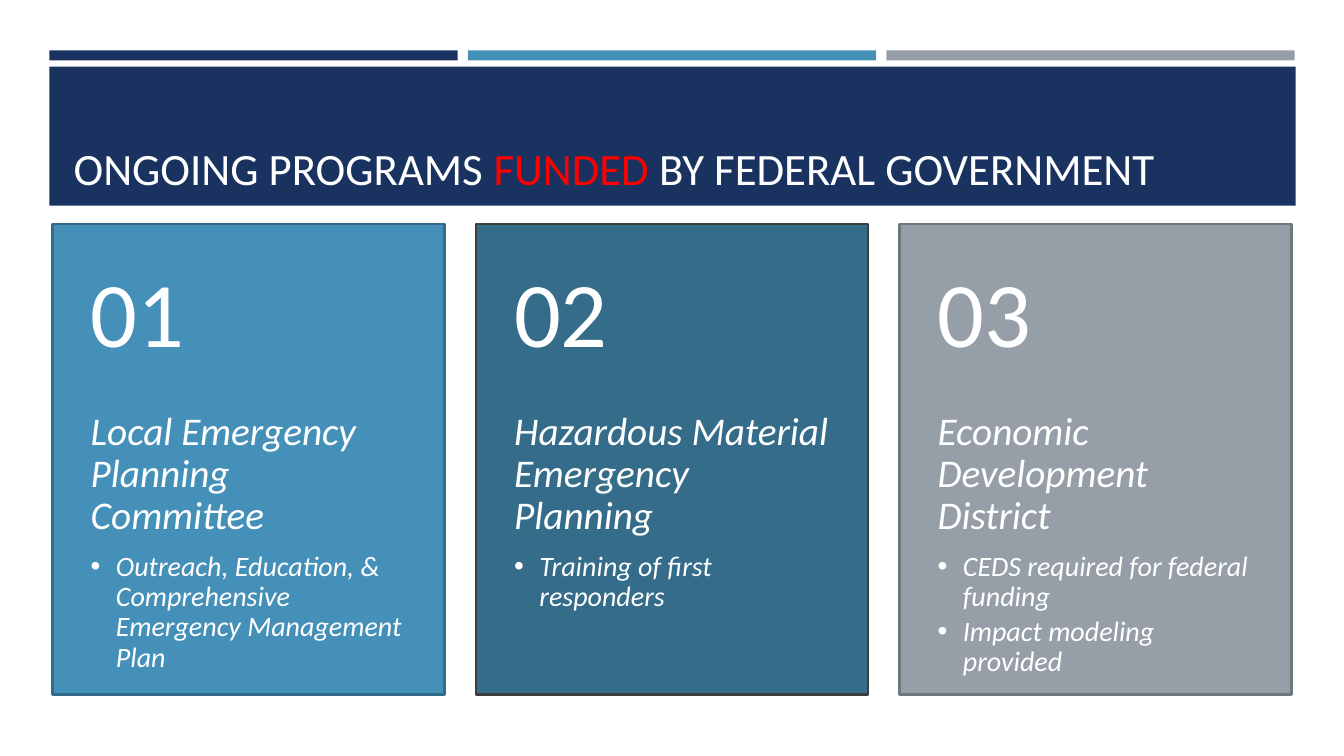
from lxml import etree
from pptx import Presentation
from pptx.dml.color import RGBColor
from pptx.enum.shapes import MSO_SHAPE
from pptx.enum.text import MSO_ANCHOR, MSO_AUTO_SIZE, PP_ALIGN
from pptx.oxml.ns import qn
from pptx.util import Pt

RECT = MSO_SHAPE.RECTANGLE
TOP, MIDDLE, BOTTOM = MSO_ANCHOR.TOP, MSO_ANCHOR.MIDDLE, MSO_ANCHOR.BOTTOM
LEFT = PP_ALIGN.LEFT
NO_FIT = MSO_AUTO_SIZE.NONE

NAVY = RGBColor(0x1A, 0x32, 0x60)
BLUE = RGBColor(0x45, 0x90, 0xB8)
TEAL = RGBColor(0x34, 0x6C, 0x8A)
GRAY = RGBColor(0x96, 0x9F, 0xA7)
BLUE_EDGE = RGBColor(0x33, 0x6B, 0x88)
DARK_EDGE = RGBColor(0x3D, 0x3D, 0x3D)
GRAY_EDGE = RGBColor(0x6F, 0x76, 0x7C)
WHITE = RGBColor(0xFF, 0xFF, 0xFF)
RED = RGBColor(0xFF, 0x00, 0x00)

FONT = "Calibri"
SCALE = 9144
BAR_STEP = 415
CARD_STEP = 420

TITLE = [("ONGOING PROGRAMS ", WHITE), ("FUNDED", RED),
         (" BY FEDERAL GOVERNMENT", WHITE)]
CARDS = [
    (BLUE, BLUE_EDGE, "Local Emergency Planning Committee",
     ["Outreach, Education, & Comprehensive Emergency Management Plan"]),
    (TEAL, DARK_EDGE, "Hazardous Material Emergency Planning",
     ["Training of first responders"]),
    (GRAY, GRAY_EDGE, "Economic Development District",
     ["CEDS required for federal funding", "Impact modeling provided"]),
]


def px(*sizes):
    return [size * SCALE for size in sizes]


def set_all(item, values):
    for name, value in values.items():
        setattr(item, name, value)


def add_rect(shapes, box, fill, edge=None):
    rect = shapes.add_shape(RECT, *px(*box))
    rect.shadow.inherit = False
    rect.fill.solid()
    rect.fill.fore_color.rgb = fill
    if edge is None:
        rect.line.fill.background()
    else:
        rect.line.color.rgb = edge
        rect.line.width = Pt(1.75)
    return rect


def set_frame(frame, anchor, insets):
    left, top, right, bottom = px(*insets)
    set_all(frame, {"word_wrap": True, "auto_size": NO_FIT,
                    "vertical_anchor": anchor, "margin_left": left,
                    "margin_top": top, "margin_right": right,
                    "margin_bottom": bottom})


def add_run(para, text, size, color=WHITE, italic=False):
    run = para.add_run()
    run.text = text
    set_all(run.font, {"name": FONT, "size": Pt(size), "italic": italic})
    run.font.color.rgb = color


def add_box(shapes, box, anchor, insets):
    frame = shapes.add_textbox(*px(*box)).text_frame
    set_frame(frame, anchor, insets)
    return frame


def fill_para(para, text, size, after, italic=True):
    set_all(para, {"alignment": LEFT, "line_spacing": 0.9,
                   "space_after": Pt(after)})
    add_run(para, text, size, italic=italic)


def add_bullet(frame, text):
    para = frame.add_paragraph()
    para.level = 1
    fill_para(para, text, 20, 3)
    props = para._p.get_or_add_pPr()
    indent, = px(25)
    props.set("marL", str(indent))
    props.set("indent", str(-indent))
    etree.SubElement(props, qn("a:buFont")).set("typeface", "Arial")
    etree.SubElement(props, qn("a:buChar")).set("char", "•")


def add_card(slide, index, fill, edge, head, points):
    shapes = slide.shapes.add_group_shape().shapes
    left = 52 + index * CARD_STEP
    add_rect(shapes, (left, 222, 389, 467), fill, edge)
    body = add_box(shapes, (left, 408, 389, 280), TOP, (38, 0, 38, 36))
    fill_para(body.paragraphs[0], head, 28, 10)
    for point in points:
        add_bullet(body, point)
    number = add_box(shapes, (left, 222, 389, 187), MIDDLE, (38, 18, 38, 18))
    fill_para(number.paragraphs[0], f"{index + 1:02}", 66, 23, italic=False)


def add_title(slide, band):
    title = slide.shapes.title
    band.element.addnext(title.element)
    left, top, width, height = px(63, 38, 1206, 187)
    set_all(title, {"left": left, "top": top,
                    "width": width, "height": height})
    set_frame(title.text_frame, BOTTOM, (10, 5, 10, 32))
    para = title.text_frame.paragraphs[0]
    para.alignment = LEFT
    for text, color in TITLE:
        add_run(para, text, 32, color)


def main():
    deck = Presentation()
    deck.slide_width, deck.slide_height = px(1333, 750)
    slide = deck.slides.add_slide(deck.slide_layouts[5])
    for index, color in enumerate((NAVY, BLUE, GRAY)):
        add_rect(slide.shapes, (49 + index * BAR_STEP, 50, 405, 10), color)
    band = add_rect(slide.shapes, (49, 66, 1236, 138), NAVY)
    add_title(slide, band)
    for index, card in enumerate(CARDS):
        add_card(slide, index, *card)
    deck.save("out.pptx")


if __name__ == "__main__":
    main()
